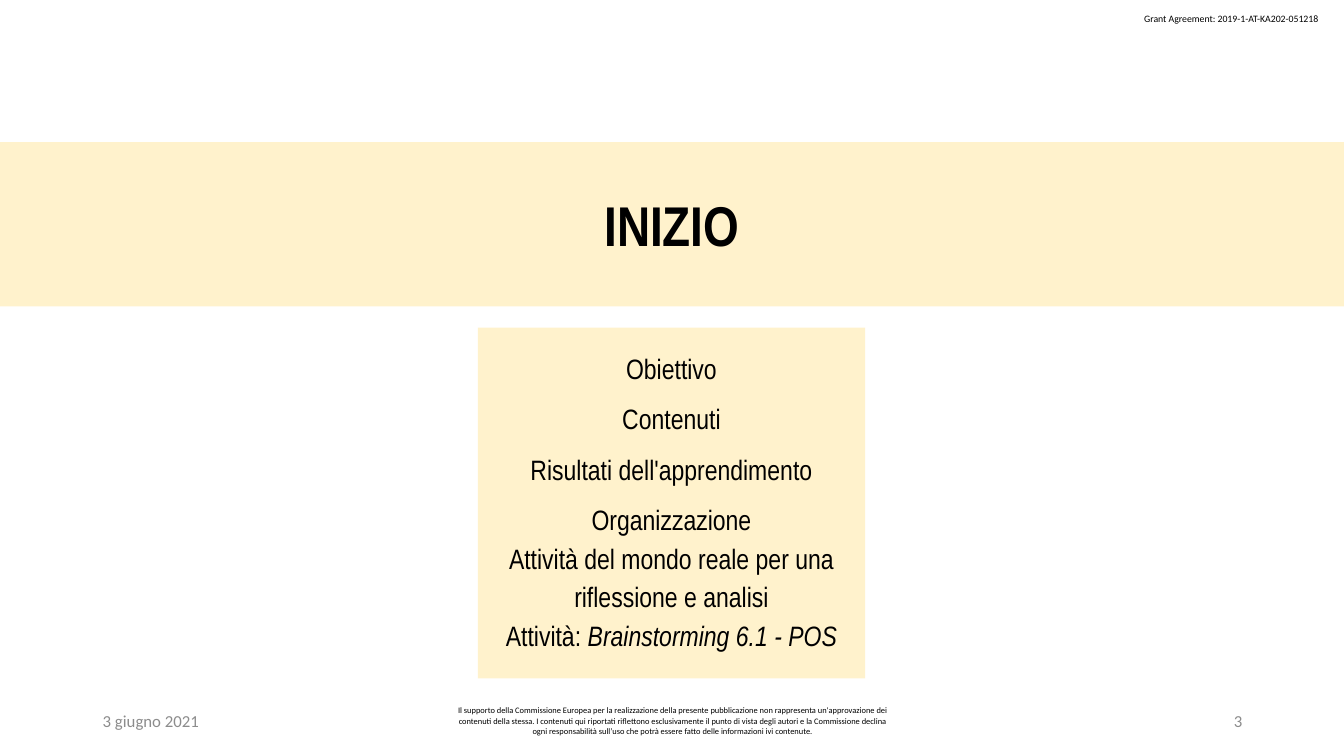
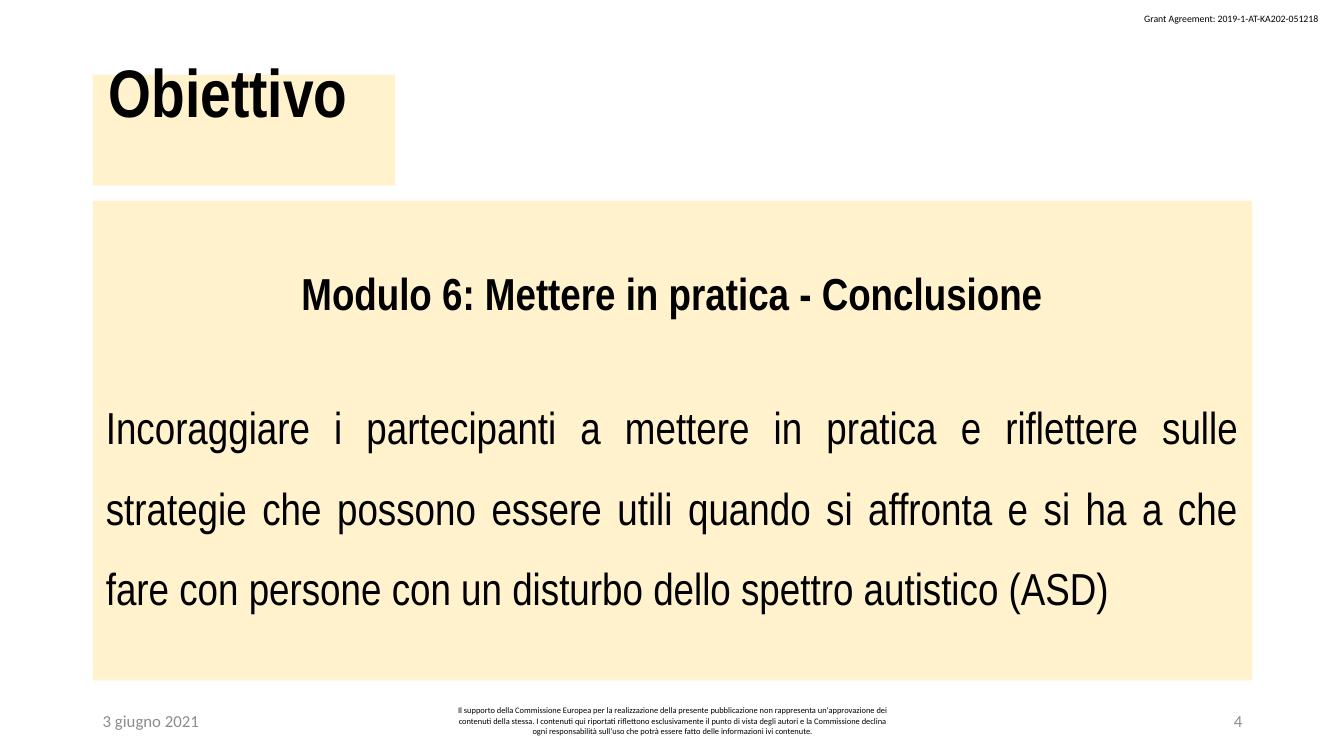
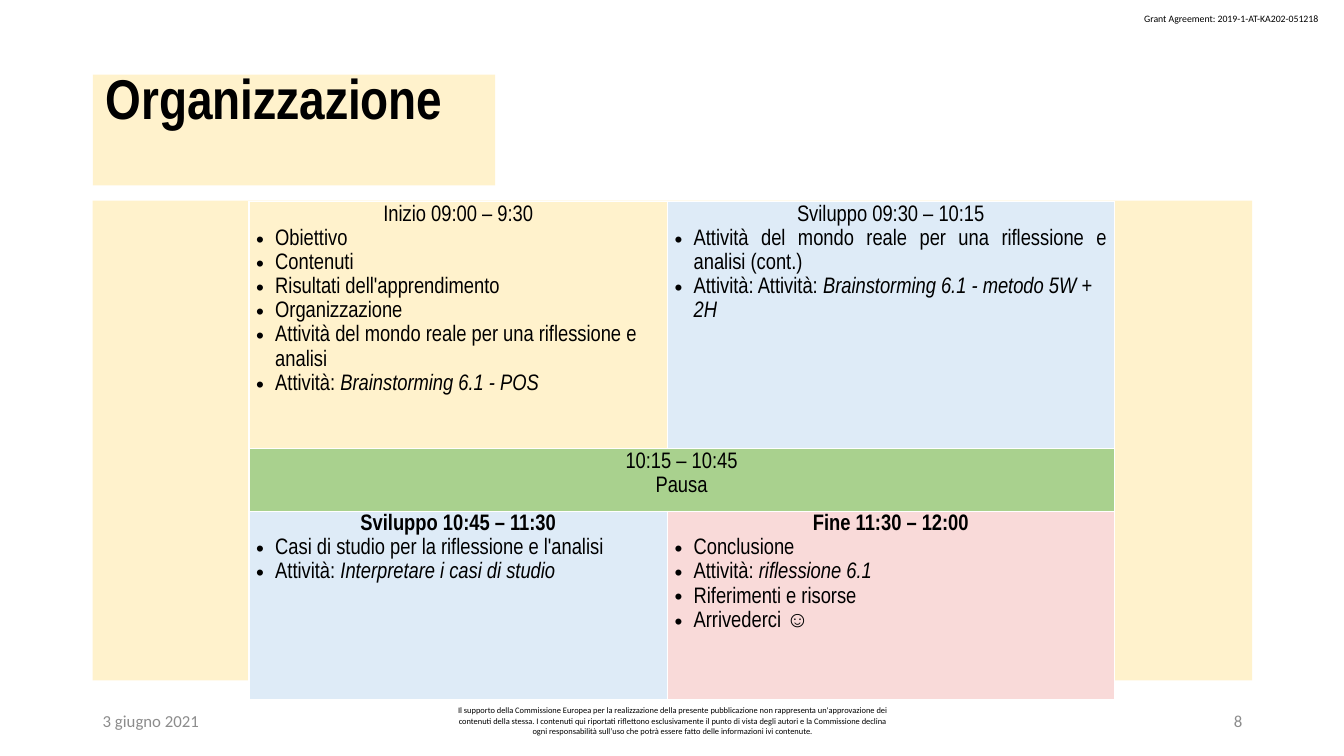
import pptx
import pptx.util
import pptx.dml.color
import pptx.enum.shapes
import pptx.enum.text
import pptx.oxml
import pptx.oxml.ns

Inches, Pt = pptx.util.Inches, pptx.util.Pt
RGBColor = pptx.dml.color.RGBColor
ALIGN = {
    "l": pptx.enum.text.PP_ALIGN.LEFT,
    "c": pptx.enum.text.PP_ALIGN.CENTER,
    "r": pptx.enum.text.PP_ALIGN.RIGHT,
    "j": pptx.enum.text.PP_ALIGN.JUSTIFY,
}
TOP = pptx.enum.text.MSO_ANCHOR.TOP
MIDDLE = pptx.enum.text.MSO_ANCHOR.MIDDLE

BLACK = RGBColor(0x00, 0x00, 0x00)
WHITE = RGBColor(0xFF, 0xFF, 0xFF)
GREY = RGBColor(0x8C, 0x8C, 0x8C)
CREAM = RGBColor(0xFF, 0xF2, 0xCC)
BLUE = RGBColor(0xDE, 0xEB, 0xF7)
GREEN = RGBColor(0xA9, 0xD1, 0x8E)
PINK = RGBColor(0xF9, 0xDA, 0xD9)

HEAD_FONT, FOOT_FONT = "Arial Narrow", "Calibri"
WIDTH, HEIGHT = 13.33, 7.5
MARGIN = 0.92
BODY = (MARGIN, 1.99, 11.5, 4.76)
TITLE_TOP, TITLE_HEIGHT = 0.74, 1.1
FOOT_TOP, FOOT_HEIGHT = 6.95, 0.4
PAD = (0.13, 0.07, 0.13, 0.07)

GRANT = "Grant Agreement: 2019-1-AT-KA202-051218"
DATE = "3 giugno 2021"
DISCLAIMER = (
    "Il supporto della Commissione Europea per la realizzazione della presente "
    "pubblicazione non rappresenta un'approvazione dei contenuti della stessa. "
    "I contenuti qui riportati riflettono esclusivamente il punto di vista degli "
    "autori e la Commissione declina ogni responsabilità sull’uso che potrà essere "
    "fatto delle informazioni ivi contenute."
)

# A paragraph is (plain text, italic text, format).
TOPICS = ["Obiettivo", "Contenuti", "Risultati dell'apprendimento", "Organizzazione"]
REAL_WORLD = "Attività del mondo reale per una riflessione e analisi"
POS = "Brainstorming 6.1 - POS"
AGENDA = [(topic, "", {"spacing": 1.5}) for topic in TOPICS] + [
    (REAL_WORLD, "", {"spacing": 1.15}),
    ("Attività: ", POS, {"spacing": 1.15}),
]
GOAL = [
    ("Modulo 6: Mettere in pratica - Conclusione", "", {"bold": True, "align": "c"}),
    ("Incoraggiare i partecipanti a mettere in pratica e riflettere sulle strategie "
     "che possono essere utili quando si affronta e si ha a che fare con persone con "
     "un disturbo dello spettro autistico (ASD)", "",
     {"align": "j", "spacing": 1.5, "before": 38}),
]

ITEM = {"bullet": True}
ITEM_JUSTIFIED = {"bullet": True, "align": "j"}
HEADER = {"align": "c"}
HEADER_BOLD = {"align": "c", "bold": True}
TABLE_AT = (2.47, 2)
COLS, ROWS = (4.15, 4.43), (2.45, 0.62, 1.87)
SCHEDULE = {
    (0, 0): (CREAM, [("Inizio 09:00 – 9:30", "", HEADER)]
             + [(topic, "", ITEM) for topic in TOPICS + [REAL_WORLD]]
             + [("Attività: ", POS, ITEM)]),
    (0, 1): (BLUE, [
        ("Sviluppo 09:30 – 10:15", "", HEADER),
        (REAL_WORLD + " (cont.)", "", ITEM_JUSTIFIED),
        ("Attività: Attività: ", "Brainstorming 6.1 - metodo 5W + 2H", ITEM),
    ]),
    (1, 0): (GREEN, [("10:15 – 10:45", "", HEADER), ("Pausa", "", HEADER)]),
    (2, 0): (BLUE, [
        ("Sviluppo 10:45 – 11:30", "", HEADER_BOLD),
        ("Casi di studio per la riflessione e l'analisi", "", ITEM_JUSTIFIED),
        ("Attività: ", "Interpretare i casi di studio", ITEM),
    ]),
    (2, 1): (PINK, [
        ("Fine 11:30 – 12:00", "", HEADER_BOLD),
        ("Conclusione", "", ITEM),
        ("Attività: ", "riflessione 6.1", ITEM),
        ("Riferimenti e risorse", "", ITEM),
        ("Arrivederci ☺", "", ITEM),
    ]),
}


def sub(parent, tag, **attrs):
    el = parent.makeelement(pptx.oxml.ns.qn(tag), attrs)
    parent.append(el)
    return el


def add_bullet(p, indent=0.19):
    pPr = p._p.get_or_add_pPr()
    pPr.set("marL", str(Inches(indent)))
    pPr.set("indent", str(-Inches(indent)))
    sub(pPr, "a:buFont", typeface="Arial")
    sub(pPr, "a:buChar", char="•")


def write(tf, content, size, font=HEAD_FONT, color=BLACK, **defaults):
    """Fill a text frame with one string or a list of paragraphs."""
    if isinstance(content, str):
        content = [(content, "", {})]
    for i, (plain, italic, own) in enumerate(content):
        fmt = {**defaults, **own}
        p = tf.paragraphs[0] if i == 0 else tf.add_paragraph()
        if fmt.get("bullet"):
            add_bullet(p)
        p.alignment = ALIGN[fmt.get("align", "l")]
        p.line_spacing = fmt.get("spacing", 1.0)
        if "before" in fmt:
            p.space_before = Pt(fmt["before"])
        for text, slanted in ((plain, False), (italic, True)):
            if text:
                r = p.add_run()
                r.text = text
                r.font.name, r.font.size = font, Pt(size)
                r.font.bold, r.font.italic = fmt.get("bold", False), slanted
                r.font.color.rgb = color


def set_margins(obj, pad):
    (obj.margin_left, obj.margin_top,
     obj.margin_right, obj.margin_bottom) = map(Inches, pad)


def add_label(slide, at, text, size, wrap=True, anchor=MIDDLE, **fmt):
    tf = slide.shapes.add_textbox(*map(Inches, at)).text_frame
    tf.word_wrap, tf.vertical_anchor = wrap, anchor
    write(tf, text, size, font=FOOT_FONT, **fmt)


def add_panel(slide, at, content=None, size=20, anchor=MIDDLE, pad=PAD, **fmt):
    sp = slide.shapes.add_shape(pptx.enum.shapes.MSO_SHAPE.RECTANGLE, *map(Inches, at))
    sp.shadow.inherit = False
    sp.fill.solid()
    sp.fill.fore_color.rgb = CREAM
    sp.line.fill.background()
    if content:
        tf = sp.text_frame
        tf.word_wrap, tf.vertical_anchor = True, anchor
        set_margins(tf, pad)
        write(tf, content, size, **fmt)


def add_title(slide, text, width, size, left, bottom):
    """Title on a cream panel; the bottom inset lifts it towards the top edge."""
    add_panel(slide, (MARGIN, TITLE_TOP, width, TITLE_HEIGHT), text, size,
              pad=(left, 0.07, 0.13, bottom), bold=True)


def add_base(prs, number):
    slide = prs.slides.add_slide(prs.slide_layouts[6])
    add_label(slide, (11.25, 0.08, 1.97, 0.22), GRANT, 7, wrap=False, anchor=TOP)
    for left, width, text, size, color, align in (
        (MARGIN, 3, DATE, 12, GREY, "l"),
        (4.42, 4.5, DISCLAIMER, 6, BLACK, "c"),
        (9.42, 3, str(number), 12, GREY, "r"),
    ):
        add_label(slide, (left, FOOT_TOP, width, FOOT_HEIGHT), text, size,
                  color=color, align=align)
    return slide


def add_borders(cell, color=WHITE, width=1):
    tcPr = cell._tc.get_or_add_tcPr()
    for i, side in enumerate(("a:lnL", "a:lnR", "a:lnT", "a:lnB")):
        ln = tcPr.makeelement(pptx.oxml.ns.qn(side), {"w": str(Pt(width))})
        sub(sub(ln, "a:solidFill"), "a:srgbClr", val=str(color))
        tcPr.insert(i, ln)


def add_schedule(slide):
    size = (sum(COLS), sum(ROWS))
    table = slide.shapes.add_table(
        len(ROWS), len(COLS), *map(Inches, TABLE_AT + size)).table
    table.first_row = table.horz_banding = False
    for col, width in zip(table.columns, COLS):
        col.width = Inches(width)
    for row, height in zip(table.rows, ROWS):
        row.height = Inches(height)
    table.cell(1, 0).merge(table.cell(1, 1))
    for (row, col), (fill, content) in SCHEDULE.items():
        cell = table.cell(row, col)
        cell.fill.solid()
        cell.fill.fore_color.rgb = fill
        add_borders(cell)
        set_margins(cell, (0.07, 0, 0.07, 0))
        write(cell.text_frame, content, 16, spacing=1.15)


def main():
    prs = pptx.Presentation()
    prs.slide_width, prs.slide_height = Inches(WIDTH), Inches(HEIGHT)

    opening = add_base(prs, 3)
    add_panel(opening, (0, 1.41, WIDTH, 1.63), "INIZIO", 40, bold=True, align="c")
    add_panel(opening, (4.74, 3.25, 3.84, 3.48), AGENDA, 20, anchor=TOP, align="c")

    goal = add_base(prs, 4)
    add_title(goal, "Obiettivo", 3, 48, left=0.16, bottom=0.85)
    add_panel(goal, BODY, GOAL, 32)

    schedule = add_base(prs, 8)
    add_title(schedule, "Organizzazione", 3.99, 40, left=0.13, bottom=0.73)
    add_panel(schedule, BODY)
    add_schedule(schedule)

    prs.save("out.pptx")


if __name__ == "__main__":
    main()
